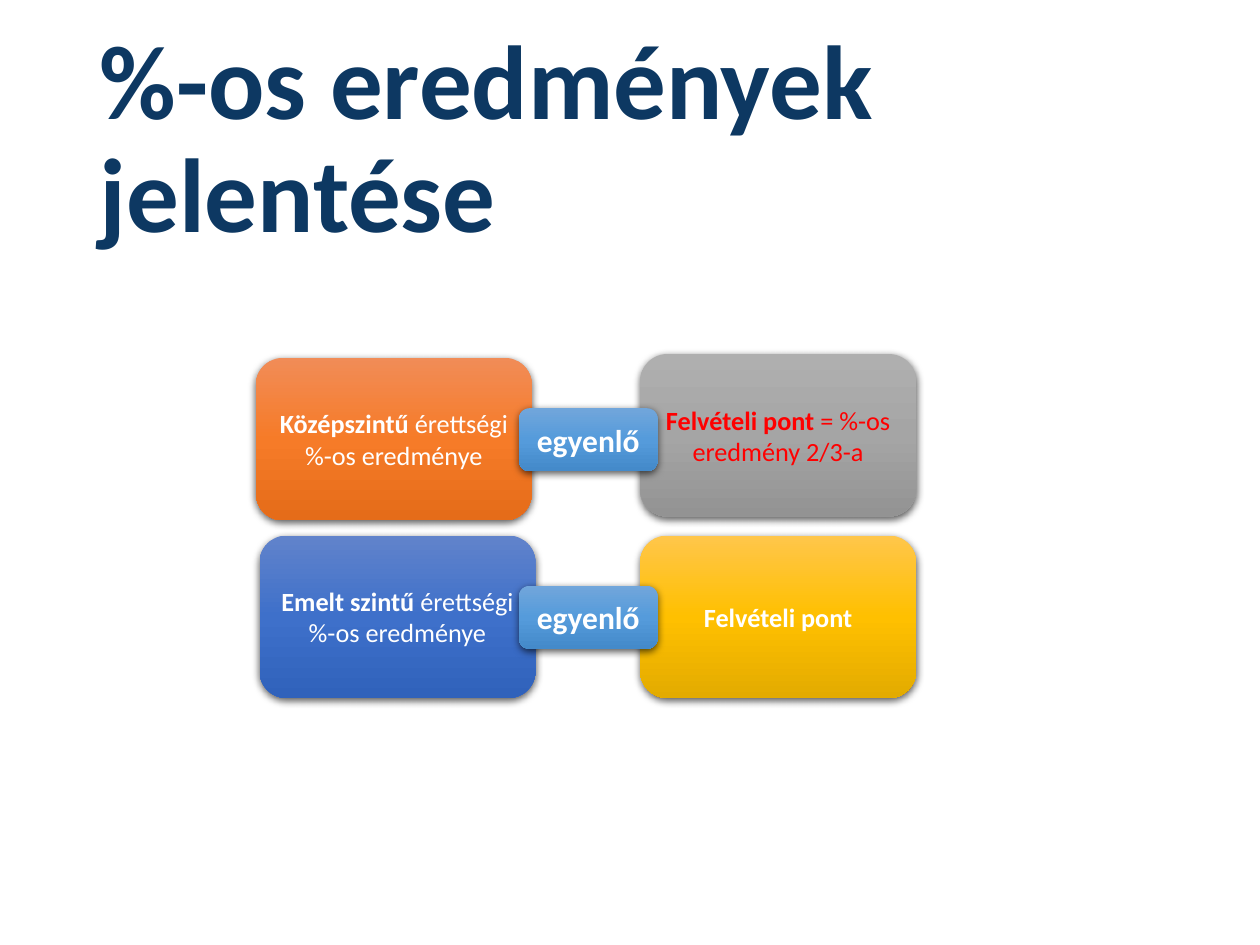
from dataclasses import dataclass

from pptx import Presentation
from pptx.dml.color import RGBColor
from pptx.enum.shapes import MSO_SHAPE
from pptx.enum.text import MSO_ANCHOR, MSO_AUTO_SIZE, PP_ALIGN
from pptx.oxml import parse_xml
from pptx.oxml.ns import nsdecls, qn
from pptx.util import Pt


@dataclass(frozen=True)
class Theme:
    """Colours, font and type sizes of the slide."""
    font: str = "Calibri"
    navy: str = "0D3862"
    white: str = "FFFFFF"
    red: str = "FF0000"
    orange: tuple = ("F18C57", "F67B28", "E56C19")
    blue: tuple = ("6183CB", "3E70CA", "3062BB")
    grey: tuple = ("AFAFAF", "A5A5A5", "939393")
    gold: tuple = ("FFC64B", "FFC000", "E3AB00")
    sky: tuple = ("71A6DB", "559BDB", "448ACA")
    title: int = 60
    label: int = 18
    body: int = 15


THEME = Theme()
CARD_W, CARD_H = 157.7, 92.9
LINK_W, LINK_H = 79.2, 36
RIGHT_X, LINK_X = 365.8, 296.6


def style_run(r, size, color, bold):
    """Format one run."""
    r.font.name = THEME.font
    r.font.size = Pt(size)
    r.font.bold = bold
    r.font.color.rgb = RGBColor.from_string(color)


def add_title(s, text):
    """Fill and place the title placeholder."""
    sp = s.shapes.title
    sp.left, sp.top, sp.width, sp.height = Pt(49.7), Pt(28.8), Pt(620.6), Pt(104.4)
    tf = sp.text_frame
    tf.text = text
    tf.word_wrap = True
    tf.auto_size = MSO_AUTO_SIZE.NONE
    tf.vertical_anchor = MSO_ANCHOR.MIDDLE
    p = tf.paragraphs[0]
    p.alignment = PP_ALIGN.LEFT
    p.line_spacing = 0.9
    style_run(p.runs[0], THEME.title, THEME.navy, True)


def shade(sp, colors):
    """Give a shape a vertical three-stop gradient and a soft shadow."""
    sp.line.fill.background()
    sp.shadow.inherit = False
    sp.fill.background()
    spPr = sp._element.spPr
    stops = "".join(
        f'<a:gs pos="{i * 50000}"><a:srgbClr val="{c}"/></a:gs>'
        for i, c in enumerate(colors))
    spPr.replace(spPr.find(qn("a:noFill")), parse_xml(
        f'<a:gradFill {nsdecls("a")} rotWithShape="1"><a:gsLst>{stops}</a:gsLst>'
        '<a:lin ang="5400000" scaled="0"/></a:gradFill>'))
    spPr.find(qn("a:effectLst")).append(parse_xml(
        f'<a:outerShdw {nsdecls("a")} blurRad="{Pt(4.5)}" dist="{Pt(1.5)}" dir="5400000"'
        ' algn="ctr" rotWithShape="0"><a:srgbClr val="000000">'
        '<a:alpha val="63000"/></a:srgbClr></a:outerShdw>'))


def add_box(s, x, y, w, h, fill, bold, rest="", color=THEME.white, size=THEME.body):
    """Add a rounded box with a bold lead and an optional regular remainder."""
    sp = s.shapes.add_shape(MSO_SHAPE.ROUNDED_RECTANGLE, Pt(x), Pt(y), Pt(w), Pt(h))
    shade(sp, fill)
    tf = sp.text_frame
    tf.word_wrap = True
    tf.vertical_anchor = MSO_ANCHOR.MIDDLE
    tf.margin_left = tf.margin_right = tf.margin_top = tf.margin_bottom = Pt(4)
    p = tf.paragraphs[0]
    p.text = bold + rest
    p.alignment = PP_ALIGN.CENTER
    p.runs[0].text = bold
    style_run(p.runs[0], size, color, True)
    if rest:
        for r in p.runs[1:]:
            style_run(r, size, color, False)


def add_card(s, x, y, fill, parts, color=THEME.white):
    """Add a large card whose text is made of (text, bold) parts."""
    add_box(s, x, y, CARD_W, CARD_H, fill, parts[0], color=color)
    p = s.shapes[-1].text_frame.paragraphs[0]
    for i, line in enumerate("".join(parts[1:]).split("\n")):
        if i:
            p.add_line_break()
        if line:
            r = p.add_run()
            r.text = line
            style_run(r, THEME.body, color, False)


def add_link(s, y):
    """Add the small label that joins two cards."""
    add_box(s, LINK_X, y, LINK_W, LINK_H, THEME.sky, "egyenlő", size=THEME.label)


def main():
    """Build and save the slide."""
    prs = Presentation()
    prs.slide_width, prs.slide_height = Pt(720), Pt(540)
    s = prs.slides.add_slide(prs.slide_layouts[5])
    add_title(s, "%-os eredmények jelentése")
    add_card(s, 146.2, 204.5, THEME.orange, ("Középszintű", " érettségi\n%-os eredménye"))
    add_card(s, 148.3, 306, THEME.blue, ("Emelt szintű ", "érettségi\n%-os eredménye"))
    add_card(s, RIGHT_X, 306, THEME.gold, ("Felvételi pont",))
    add_card(s, RIGHT_X, 202.3, THEME.grey, ("Felvételi pont ", "= %-os eredmény 2/3-a"), THEME.red)
    for y in (334.8, 233.3):
        add_link(s, y)
    prs.save("out.pptx")


if __name__ == "__main__":
    main()
